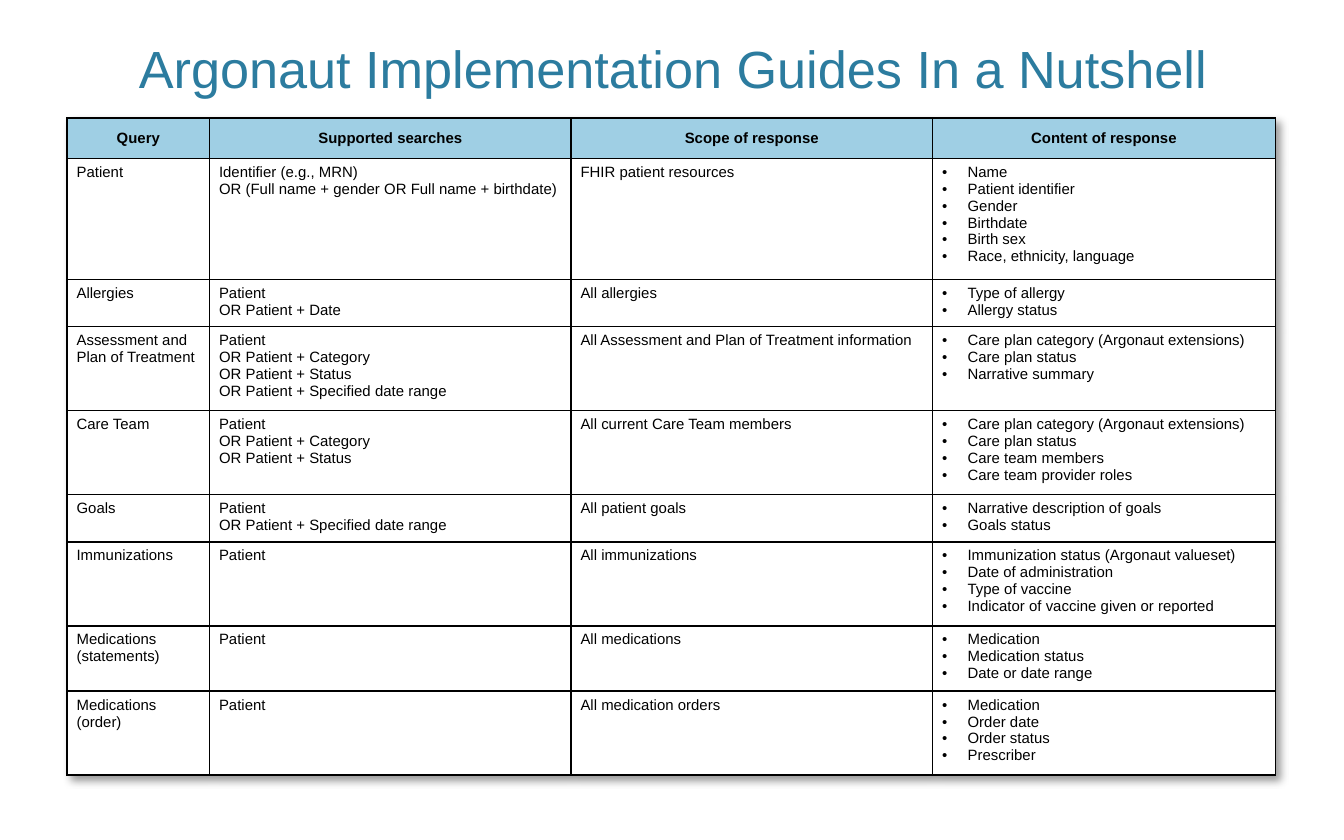
from lxml.etree import SubElement
from pptx import Presentation
from pptx.dml.color import RGBColor
from pptx.enum.text import MSO_ANCHOR, MSO_AUTO_SIZE, PP_ALIGN
from pptx.oxml import parse_xml
from pptx.oxml.ns import nsdecls, qn
from pptx.util import Inches, Pt

HUES = {"title": "2C7C9F", "head": "9FCFE4", "body": "FFFFFF", "ink": "000000"}
FONT = "Arial"
GRID = (1000, 625)
COLS = (106, 269, 269, 255)
HEAD = ("Query", "Supported searches", "Scope of response", "Content of response")
ROWS = (
    ("Patient",
     ("Identifier (e.g., MRN)", "OR (Full name + gender OR Full name + birthdate)"),
     "FHIR patient resources",
     ("Name", "Patient identifier", "Gender", "Birthdate", "Birth sex",
      "Race, ethnicity, language")),
    ("Allergies",
     ("Patient", "OR Patient + Date"),
     "All allergies",
     ("Type of allergy", "Allergy status")),
    ("Assessment and Plan of Treatment",
     ("Patient", "OR Patient + Category", "OR Patient + Status",
      "OR Patient + Specified date range"),
     "All Assessment and Plan of Treatment information",
     ("Care plan category (Argonaut extensions)", "Care plan status",
      "Narrative summary")),
    ("Care Team",
     ("Patient", "OR Patient + Category", "OR Patient + Status"),
     "All current Care Team members",
     ("Care plan category (Argonaut extensions)", "Care plan status",
      "Care team members", "Care team provider roles")),
    ("Goals",
     ("Patient", "OR Patient + Specified date range"),
     "All patient goals",
     ("Narrative description of goals", "Goals status")),
    ("Immunizations",
     ("Patient",),
     "All immunizations",
     ("Immunization status (Argonaut valueset)", "Date of administration",
      "Type of vaccine", "Indicator of vaccine given or reported")),
    ("Medications (statements)",
     ("Patient",),
     "All medications",
     ("Medication", "Medication status", "Date or date range")),
    ("Medications (order)",
     ("Patient",),
     "All medication orders",
     ("Medication", "Order date", "Order status", "Prescriber")),
)


def add_run(para, text, size, hue, bold=False):
    """Add one styled run to a paragraph."""
    run = para.add_run()
    run.text = text
    font = run.font
    font.name, font.size, font.bold = FONT, Pt(size), bold
    font.color.rgb = RGBColor.from_string(HUES[hue])


def add_mark(para):
    """Give a paragraph a hanging bullet."""
    props = para._p.get_or_add_pPr()
    props.set("marL", str(Inches(0.19)))
    props.set("indent", str(-Inches(0.19)))
    SubElement(props, qn("a:buFont"), typeface=FONT)
    SubElement(props, qn("a:buChar"), char="•")


def add_edge(cell):
    """Draw a thin line on all four sides of a cell."""
    props = cell._tc.get_or_add_tcPr()
    for at, side in enumerate("LRTB"):
        props.insert(at, parse_xml(
            f'<a:ln{side} {nsdecls("a")} w="{Pt(1)}"><a:solidFill>'
            f'<a:srgbClr val="{HUES["ink"]}"/></a:solidFill></a:ln{side}>'))


def add_shade(table):
    """Cast a soft shadow from the table."""
    table._tbl.tblPr.insert(0, parse_xml(
        f'<a:effectLst {nsdecls("a")}><a:outerShdw blurRad="{Pt(4)}" '
        f'dist="{Pt(3)}" dir="2700000" algn="tl" rotWithShape="0">'
        f'<a:srgbClr val="{HUES["ink"]}"><a:alpha val="40000"/></a:srgbClr>'
        '</a:outerShdw></a:effectLst>'))


def fill_cell(cell, lines, head=False, marks=False):
    """Style a cell and write its lines."""
    cell.fill.solid()
    cell.fill.fore_color.rgb = RGBColor.from_string(HUES["head" if head else "body"])
    add_edge(cell)
    cell.margin_left = cell.margin_right = Inches(0.07)
    cell.margin_top = cell.margin_bottom = Inches(0.04)
    cell.vertical_anchor = MSO_ANCHOR.MIDDLE if head else MSO_ANCHOR.TOP
    frame = cell.text_frame
    for at, line in enumerate(lines):
        para = frame.add_paragraph() if at else frame.paragraphs[0]
        para.alignment = PP_ALIGN.CENTER if head else PP_ALIGN.LEFT
        if marks:
            add_mark(para)
        add_run(para, line, 8, "ink", head)


def add_title(slide, box, text):
    """Place the title in its box."""
    title = slide.shapes.title
    title.left, title.top, title.width, title.height = box
    frame = title.text_frame
    frame.auto_size = MSO_AUTO_SIZE.NONE
    frame.word_wrap = True
    frame.vertical_anchor = MSO_ANCHOR.BOTTOM
    frame.margin_top = frame.margin_bottom = Inches(0.03)
    para = frame.paragraphs[0]
    para.alignment = PP_ALIGN.CENTER
    add_run(para, text, 28, "title")


def add_guide(slide, box):
    """Build the table, with row heights that follow the line counts."""
    table = slide.shapes.add_table(len(ROWS) + 1, len(COLS), *box).table
    add_shade(table)
    for col, share in zip(table.columns, COLS):
        col.width = int(box[2] * share / sum(COLS))
    sizes = [0.3] + [0.075 + 0.1375 * max(len(row[1]), len(row[3])) for row in ROWS]
    for row, size in zip(table.rows, sizes):
        row.height = int(box[3] * size / sum(sizes))
    for y, row in enumerate((HEAD, *ROWS)):
        for x, text in enumerate(row):
            lines = (text,) if isinstance(text, str) else text
            fill_cell(table.cell(y, x), lines, y == 0, y > 0 and x == 3)


def main():
    """Build and save the slide."""
    deck = Presentation()
    deck.slide_width, deck.slide_height = Inches(10), Inches(6.25)
    unit = (deck.slide_width // GRID[0], deck.slide_height // GRID[1]) * 2

    def area(*cells):
        """Turn grid cells into lengths."""
        return [cell * step for cell, step in zip(cells, unit)]

    slide = deck.slides.add_slide(deck.slide_layouts[5])
    add_title(slide, area(32, 41, 937, 36), "Argonaut Implementation Guides In a Nutshell")
    add_guide(slide, area(50, 88, 899, 489))
    deck.save("out.pptx")


if __name__ == "__main__":
    main()
